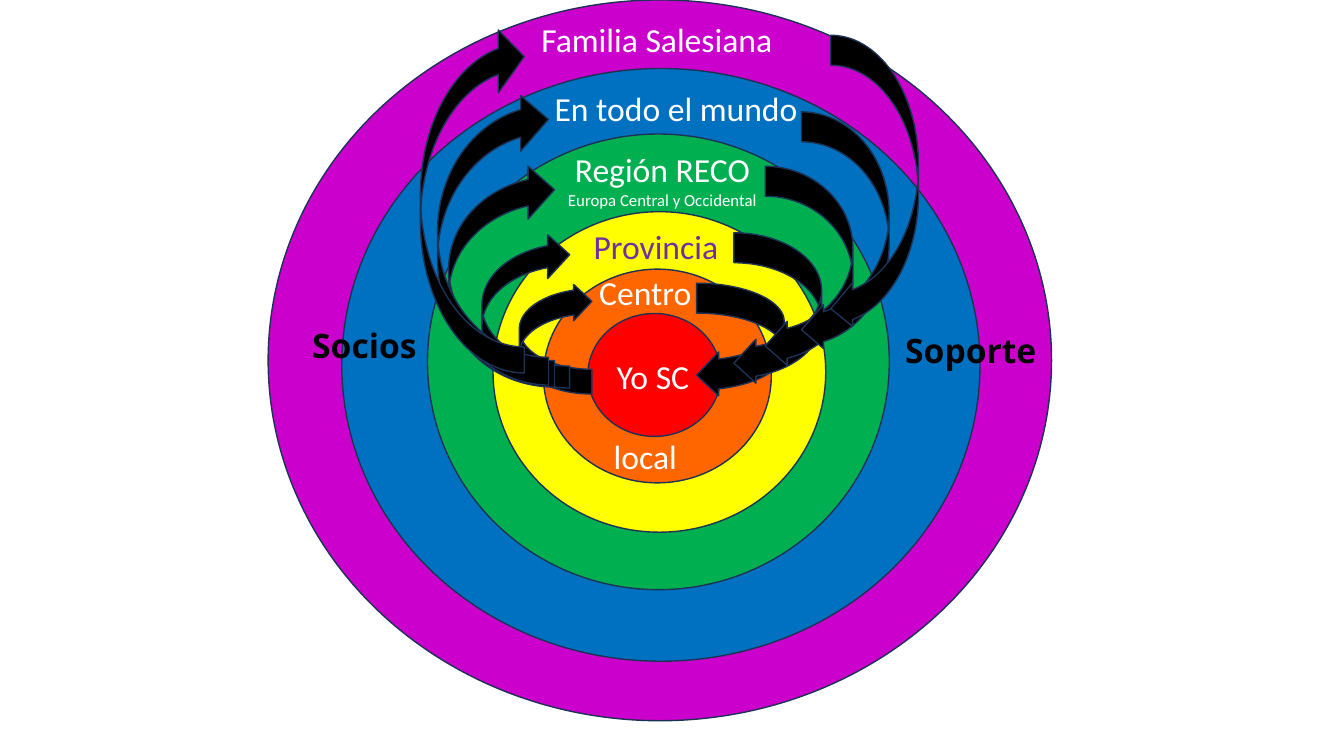
from pptx import Presentation
from pptx.dml.color import RGBColor
from pptx.enum.shapes import MSO_SHAPE
from pptx.enum.text import PP_ALIGN
from pptx.util import Inches, Pt

CIRCLE = MSO_SHAPE.FLOWCHART_CONNECTOR
CURVED_ARROW = MSO_SHAPE.CURVED_RIGHT_ARROW
LEFT, CENTER, RIGHT = PP_ALIGN.LEFT, PP_ALIGN.CENTER, PP_ALIGN.RIGHT

COLORS = {
    "family": "CC00CC", "world": "0070C0", "region": "00B050",
    "province": "FFFF00", "centre": "FF6600", "self": "FF0000",
    "outline": "1E3256", "white": "FFFFFF", "purple": "7030A0", "black": "000000",
}

RINGS = [
    ("family", 0, 0, 7.77, 7.15),
    ("world", 0.73, 0.68, 6.33, 5.88),
    ("region", 1.58, 1.33, 4.58, 4.52),
    ("province", 2.23, 2.1, 3.3, 3.18),
    ("centre", 2.73, 2.67, 2.26, 2.12),
    ("self", 3.17, 3.11, 1.32, 1.22),
]
RING_LABELS = [
    ((3.09, 3.48, 1.45, 0.91), [("Yo SC", 24, 0)], "white", CENTER),
    ((2.96, 2.65, 1.56, 2.12), [("Centro", 24, 0), ("local", 24, 88)], "white", CENTER),
    ((2.88, 2.19, 1.93, 0.5), [("Provincia", 24, 0)], "purple", CENTER),
    ((2.83, 1.43, 2.16, 0.71),
     [("Región RECO", 24, 0), ("Europa Central y Occidental", 12, 0)], "white", CENTER),
    ((2.61, 0.82, 2.87, 0.5), [("En todo el mundo", 24, 0)], "white", CENTER),
    ((2.61, 0.14, 2.79, 0.5), [("Familia Salesiana", 24, 0)], "white", LEFT),
]

NORMAL, THICK, LONG = (0.25, 0.5, 0.25), (0.341, 0.5, 0.25), (0.25, 0.606, 0.25)
PARTNER_ARROWS = [
    (0.98, 2.56, 0.72, 1.1, THICK),
    (0.61, 2.06, 0.87, 1.54, NORMAL),
    (0.28, 1.37, 1.05, 2.22, NORMAL),
    (0.17, 0.66, 1.1, 2.91, NORMAL),
    (0, 0, 1.03, 3.45, LONG),
]
SUPPORT_ARROWS = [
    (x, y, 0.87, height, THICK) for x, y, height in
    [(0, 2.46, 1.13), (0.37, 1.96, 1.51), (0.68, 1.3, 2),
     (1.04, 0.76, 2.38), (1.33, 0, 2.93)]
]


def place(origin, part):
    x, y, width, height = part
    return [Inches(length) for length in (origin[0] + x, origin[1] + y, width, height)]


def add_outlined(slide, preset, origin, part, color):
    shape = slide.shapes.add_shape(preset, *place(origin, part))
    shape.shadow.inherit = False
    shape.fill.solid()
    shape.fill.fore_color.rgb = RGBColor.from_string(COLORS[color])
    shape.line.color.rgb = RGBColor.from_string(COLORS["outline"])
    shape.line.width = Pt(1)
    return shape


def add_label(slide, origin, part, lines, color, align, face="Calibri", bold=False):
    frame = slide.shapes.add_textbox(*place(origin, part)).text_frame
    frame.word_wrap = True
    for index, (words, size, gap) in enumerate(lines):
        paragraph = frame.add_paragraph() if index else frame.paragraphs[0]
        paragraph.text = words
        paragraph.alignment = align
        if gap:
            paragraph.space_before = Pt(gap)
        paragraph.font.name = face
        paragraph.font.size = Pt(size)
        paragraph.font.bold = bold
        paragraph.font.color.rgb = RGBColor.from_string(COLORS[color])


def draw_rings(slide, origin):
    for color, *part in RINGS:
        add_outlined(slide, CIRCLE, origin, part, color)
    for part, lines, color, align in RING_LABELS:
        add_label(slide, origin, part, lines, color, align)


def draw_flow(slide, origin, arrows, flip, title, title_part, align):
    for *part, bends in arrows:
        arrow = add_outlined(slide, CURVED_ARROW, origin, part, "black")
        arrow.element.spPr.get_or_add_xfrm().set(flip, "1")
        for index, bend in enumerate(bends):
            arrow.adjustments[index] = bend
    add_label(slide, origin, title_part, [(title, 24, 0)], "black", align, "Open Sans", True)


def main():
    deck = Presentation()
    deck.slide_width, deck.slide_height = Inches(13.33), Inches(7.5)
    slide = deck.slides.add_slide(deck.slide_layouts[6])
    draw_rings(slide, (2.66, 0))
    draw_flow(slide, (4.17, 0.25), PARTNER_ARROWS, "flipV",
              "Socios", (-2.75, 2.92, 2.81, 0.5), RIGHT)
    draw_flow(slide, (6.91, 0.35), SUPPORT_ARROWS, "flipH",
              "Soporte", (1.97, 2.87, 2.07, 0.5), LEFT)
    deck.save("out.pptx")


if __name__ == "__main__":
    main()
